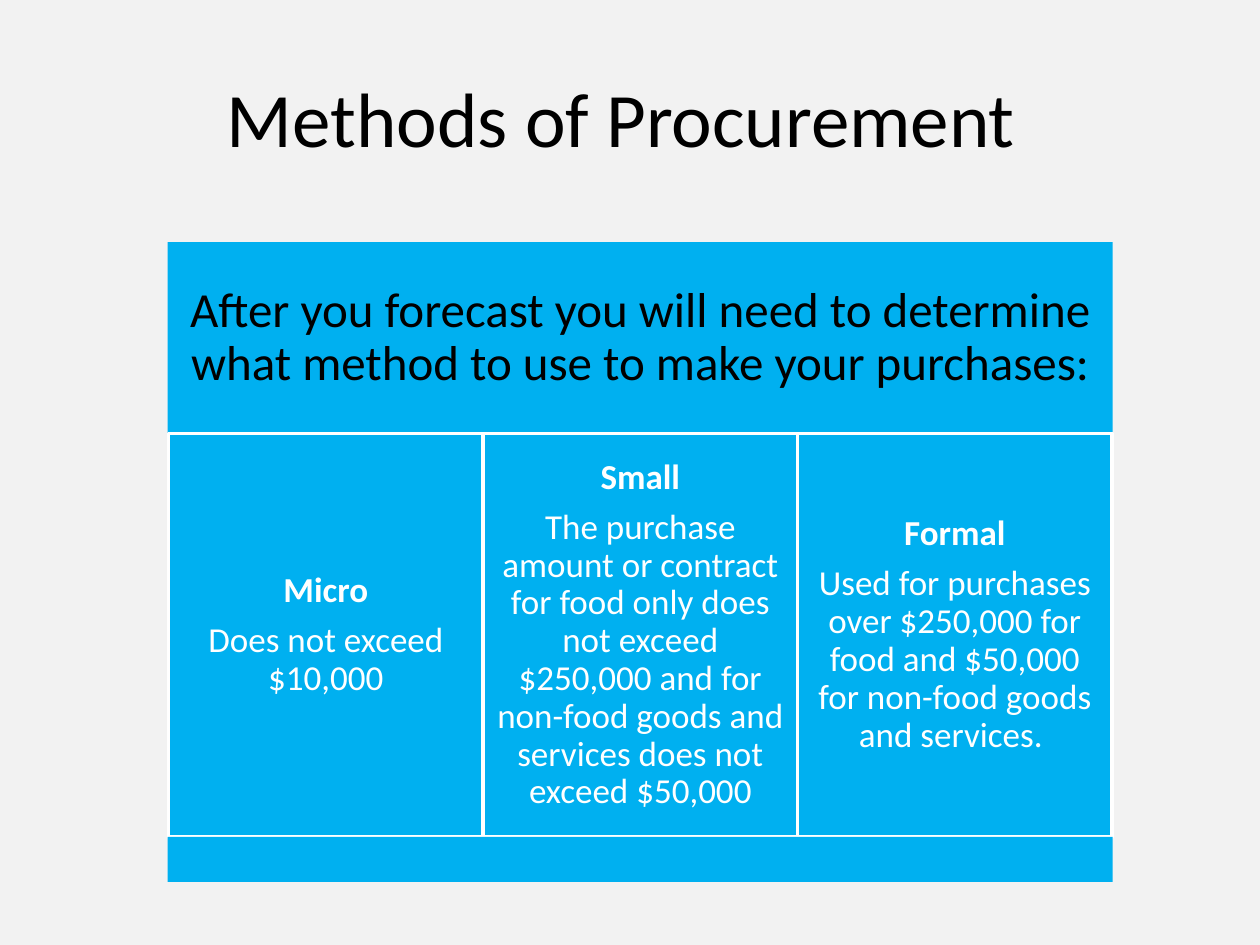
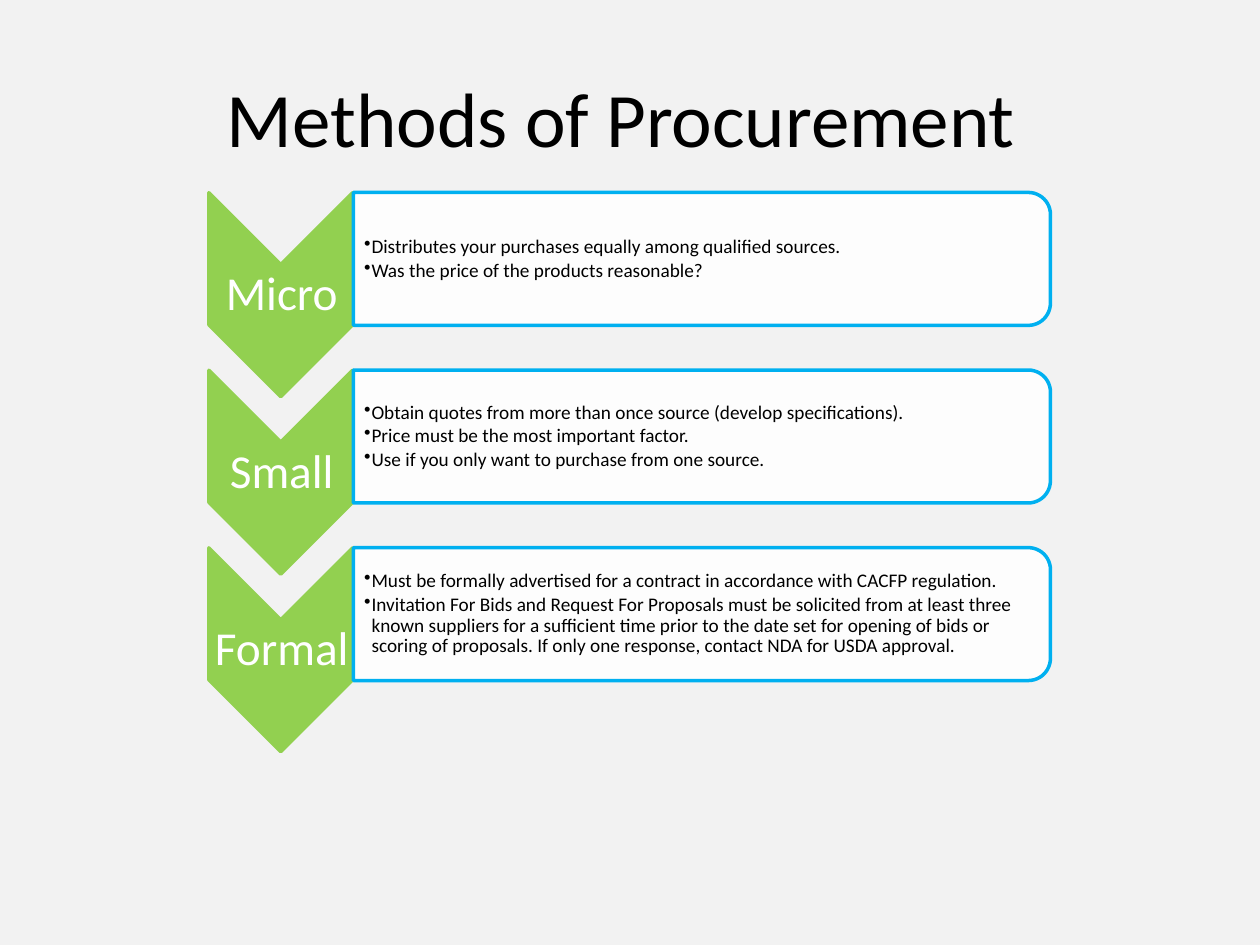
"""Build two slides on the methods of procurement."""
from dataclasses import dataclass

from lxml import etree
from pptx import Presentation
from pptx import util as u
from pptx.dml.color import RGBColor
from pptx.enum import shapes, text
from pptx.oxml.ns import qn

KIND = shapes.MSO_SHAPE
ALIGN = text.PP_ALIGN


@dataclass(frozen=True)
class Theme:
    """Colours, font and type sizes of the deck."""
    font: str = "Calibri"
    back: str = "F2F2F2"
    blue: str = "00B0F0"
    green: str = "92D050"
    white: str = "FFFFFF"
    black: str = "000000"
    title: int = 44
    lead: int = 28
    label: int = 27
    body: int = 20
    note: int = 11


T = Theme()
TITLE = "Methods of Procurement "
LEAD = ("After you forecast you will need to determine what method "
        "to use to make your purchases:")
LIMITS = [
    ("Micro", "Does not exceed $10,000"),
    ("Small", "The purchase amount or contract for food only does not exceed "
              "$250,000 and for non-food goods and services does not exceed $50,000"),
    ("Formal", "Used for purchases over $250,000 for food and $50,000 "
               "for non-food goods and services. "),
]
STEPS = [
    ("Micro", ["Distributes your purchases equally among qualified sources.",
               "Was the price of the products reasonable?"]),
    ("Small", ["Obtain quotes from more than once source (develop specifications).",
               "Price must be the most important factor.",
               "Use if you only want to purchase from one source."]),
    ("Formal", ["Must be formally advertised for a contract in accordance "
                "with CACFP regulation.",
                "Invitation For Bids and Request For Proposals must be solicited "
                "from at least three known suppliers for a sufficient time prior "
                "to the date set for opening of bids or scoring of proposals. "
                "If only one response, contact NDA for USDA approval."]),
]


def rgb(code):
    """Return the colour for a hex code."""
    return RGBColor.from_string(code)


def cms(*sizes):
    """Turn centimetres into lengths."""
    return [u.Cm(size) for size in sizes]


def write(shape, lines, size, color, pads, align=ALIGN.CENTER, line=0.9, after=0.0):
    """Fill a shape with middle-anchored paragraphs and return them."""
    frame = shape.text_frame
    frame.word_wrap = True
    frame.vertical_anchor = text.MSO_ANCHOR.MIDDLE
    (frame.margin_left, frame.margin_top,
     frame.margin_right, frame.margin_bottom) = cms(*pads)
    frame.text = "\n".join(lines)
    for para in frame.paragraphs:
        para.alignment = align
        para.line_spacing = line
        para.space_after = u.Pt(after * size)
        for run in para.runs:
            run.font.name = T.font
            run.font.size = u.Pt(size)
            run.font.color.rgb = rgb(color)
    return frame.paragraphs


def block(slide, kind, box, fill, edge=None):
    """Add a flat shape with an optional outline."""
    shape = slide.shapes.add_shape(kind, *cms(*box))
    shape.shadow.inherit = False
    shape.fill.solid()
    shape.fill.fore_color.rgb = rgb(fill)
    if edge:
        shape.line.color.rgb = rgb(edge)
        shape.line.width = u.Pt(2)
    else:
        shape.line.fill.background()
    return shape


def turned(slide, kind, mid, size, fill, edge):
    """Add a shape turned a quarter around its middle."""
    (x, y), (wide, high) = mid, size
    box = (x - wide / 2, y - high / 2, wide, high)
    shape = block(slide, kind, box, fill, edge)
    shape.rotation = 90
    return shape


def fade(shape, share):
    """Set the opacity of a solid fill in percent."""
    tint = shape.fill._xPr.find(qn("a:solidFill"))[0]
    etree.SubElement(tint, qn("a:alpha"), val=str(share * 1000))


def bullet(para):
    """Give a paragraph a hanging bullet."""
    props = para._p.get_or_add_pPr()
    props.set("marL", str(u.Cm(0.15)))
    props.set("indent", str(u.Cm(-0.15)))
    etree.SubElement(props, qn("a:buChar"), char="•")


def page(deck):
    """Add a slide with the shared background and title."""
    slide = deck.slides.add_slide(deck.slide_layouts[6])
    slide.background.fill.solid()
    slide.background.fill.fore_color.rgb = rgb(T.back)
    head = slide.shapes.add_textbox(*cms(1.27, 0.76, 22.86, 3.18))
    write(head, [TITLE], T.title, T.black, (0.25, 0.13, 0.25, 0.13), line=1.0)
    return slide


def panel(slide):
    """Draw the lead band, the three limit cells and the foot band."""
    left, wide = 3.38, 19.05
    lead = block(slide, KIND.RECTANGLE, (left, 4.88, wide, 3.86), T.blue)
    write(lead, [LEAD], T.lead, T.black, [0.3] * 4, after=0.35)
    cell = 6.34
    for i, lines in enumerate(LIMITS):
        box = (left + 0.02 + i * cell, 8.74, cell, 8.13)
        shape = block(slide, KIND.RECTANGLE, box, T.blue, T.white)
        paras = write(shape, lines, T.body, T.white, [0.2] * 4, after=0.35)
        paras[0].runs[0].font.bold = True
    block(slide, KIND.RECTANGLE, (left, 16.87, wide, 0.91), T.blue)


def step(slide, top, name, notes):
    """Draw one chevron with its label and its card of notes."""
    turned(slide, KIND.CHEVRON, (5.66, top + 2.06), (4.11, 2.9), T.green, T.green)
    label = slide.shapes.add_textbox(*cms(4.23, top + 1.45, 2.9, 1.24))
    write(label, [name], T.label, T.white, [0.04] * 4, after=0.35)
    card = turned(slide, KIND.ROUND_2_SAME_RECTANGLE, (14.15, top + 1.34),
                  (2.68, 14.05), T.white, T.blue)
    fade(card, 90)
    body = slide.shapes.add_textbox(*cms(7.12, top + 0.13, 13.92, 2.42))
    for para in write(body, notes, T.note, T.black, (0.22, 0.03, 0.03, 0.03),
                      ALIGN.LEFT, after=0.15):
        bullet(para)


def main():
    """Build and save the deck."""
    deck = Presentation()
    deck.slide_width, deck.slide_height = cms(25.4, 19.05)
    panel(page(deck))
    slide = page(deck)
    for i, (name, notes) in enumerate(STEPS):
        step(slide, 3.88 + i * 3.58, name, notes)
    deck.save("out.pptx")


if __name__ == "__main__":
    main()
